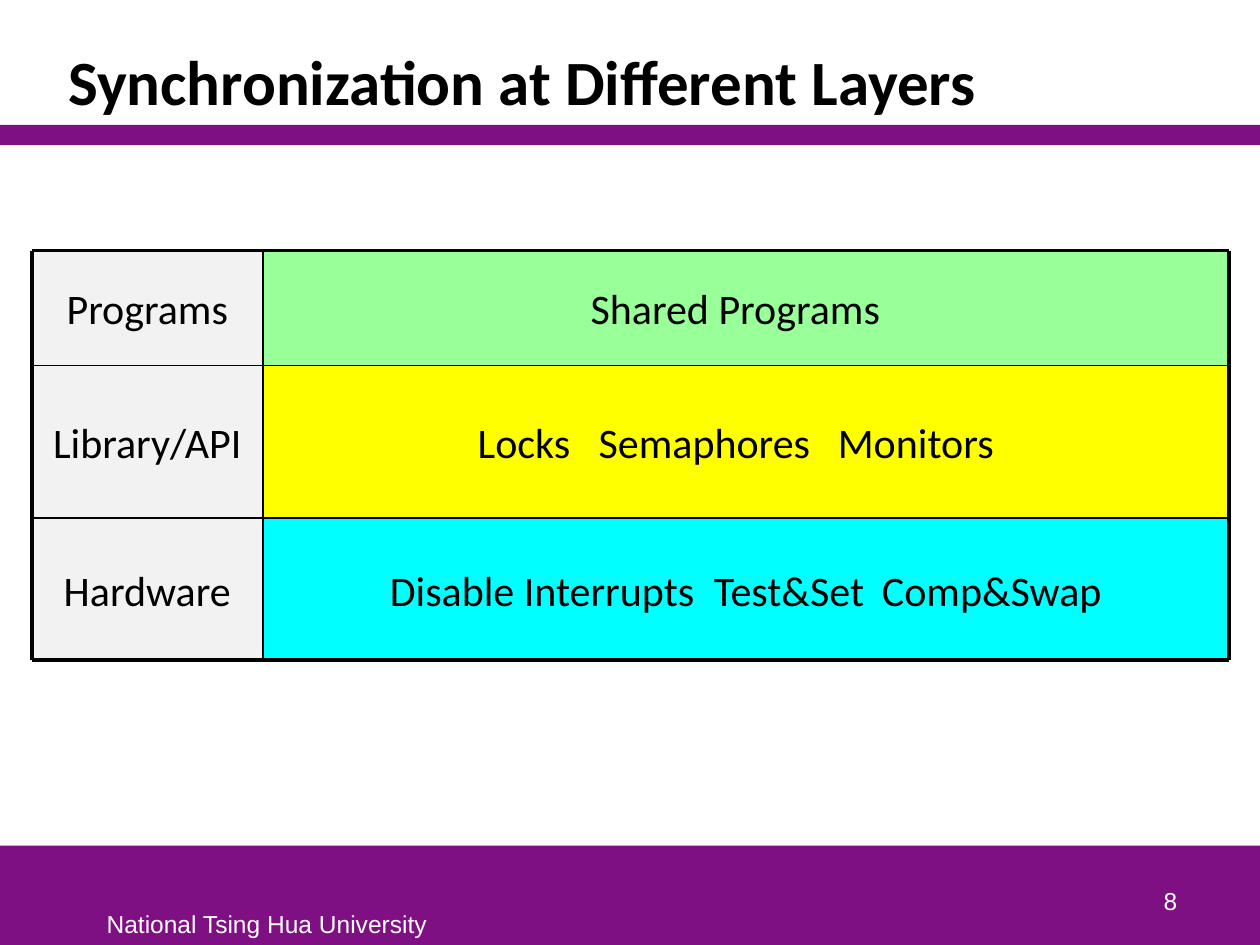
from lxml.etree import SubElement
from pptx import Presentation
from pptx.dml.color import RGBColor
from pptx.enum.shapes import MSO_CONNECTOR as CONNECTOR, MSO_SHAPE as SHAPE
from pptx.enum.text import MSO_ANCHOR as ANCHOR, PP_ALIGN as ALIGN
from pptx.oxml.ns import qn
from pptx.util import Cm, Pt

PURPLE, WHITE, BLACK, GREY = "7F1084", "FFFFFF", "000000", "F2F2F2"


def write(p, text, size, font, color, bold=False):
    """Add one formatted run to a paragraph."""
    r = p.add_run()
    r.text = text
    r.font.size, r.font.name, r.font.bold = Pt(size), font, bold
    r.font.color.rgb = RGBColor.from_string(color)


def add_box(left, top, right, bottom, fill):
    """Add a plain filled rectangle, its edges given in cm."""
    s = sp_tree.add_shape(SHAPE.RECTANGLE, Cm(left), Cm(top),
                          Cm(right - left), Cm(bottom - top))
    s.shadow.inherit = False
    s.fill.solid()
    s.fill.fore_color.rgb = RGBColor.from_string(fill)
    s.line.fill.background()
    return s


prs = Presentation()
prs.slide_width, prs.slide_height = Cm(25.4), Cm(19.05)
slide = prs.slides.add_slide(prs.slide_layouts[5])
sp_tree = slide.shapes

# Footer band and title rule
add_box(0, 17.05, 25.4, 19.05, PURPLE)
add_box(0, 2.52, 25.4, 2.92, PURPLE)

# Title
title = sp_tree.title
title.left, title.top, title.width, title.height = Cm(1.12), Cm(0.64), Cm(22.78), Cm(1.88)
title.text_frame.vertical_anchor = ANCHOR.BOTTOM
p = title.text_frame.paragraphs[0]
p.alignment, p.line_spacing = ALIGN.LEFT, 0.85
write(p, "Synchronization at Different Layers", 36, "Calibri", BLACK, bold=True)

# University name and page number
footers = [
    ("National Tsing Hua University", 1.9, 18.2, 7.02, 0.85, ALIGN.LEFT, False),
    ("8", 18.7, 17.3, 5.28, 1.27, ALIGN.RIGHT, True),
]
for text, left, top, width, height, align, wrap in footers:
    tf = sp_tree.add_textbox(Cm(left), Cm(top), Cm(width), Cm(height)).text_frame
    tf.word_wrap, tf.vertical_anchor = wrap, ANCHOR.BOTTOM
    tf.paragraphs[0].alignment = align
    write(tf.paragraphs[0], text, 14, "Arial", WHITE)

# Layers: label, mechanisms, fill, left inset and tab stops of the mechanisms
layers = [
    ("Programs", ["Shared Programs"], "99FF99", 0.25, []),
    ("Library/API", ["Locks", "Semaphores", "Monitors"], "FFFF00", 4.75, [2.44, 7.26]),
    ("Hardware", ["Disable Interrupts", "Test&Set", "Comp&Swap"], "00FFFF", 2.98, [6.53, 9.92]),
]
row_edges = [5.05, 7.37, 10.45, 13.31]
left_edge, divider, right_edge = 0.64, 5.3, 24.77
mechanism_left = 4.88  # runs under the label column

for (label, mechanisms, fill, inset, tabs), top, bottom in zip(layers, row_edges, row_edges[1:]):
    value_box = add_box(mechanism_left, top, right_edge, bottom, fill)
    label_box = add_box(left_edge, top, divider, bottom, GREY)
    for s, text in ((value_box, "\t".join(mechanisms)), (label_box, label)):
        tf = s.text_frame
        tf.word_wrap, tf.vertical_anchor = True, ANCHOR.MIDDLE
        p = tf.paragraphs[0]
        p.alignment = ALIGN.CENTER
        if s is value_box and tabs:
            tf.margin_left = Cm(inset)
            p.alignment = ALIGN.LEFT
            tab_list = SubElement(p._p.get_or_add_pPr(), qn("a:tabLst"))
            for pos in tabs:
                SubElement(tab_list, qn("a:tab"), pos=str(Cm(pos)), algn="l")
        write(p, text, 24, "Calibri", BLACK)

# Grid lines: thick around the outside, thin inside
top_edge, bottom_edge = row_edges[0], row_edges[-1]
grid = [(left_edge, y, right_edge, y) for y in row_edges]
grid += [(x, top_edge, x, bottom_edge) for x in (left_edge, divider, right_edge)]
for x1, y1, x2, y2 in grid:
    inner = x1 == x2 == divider or y1 == y2 and y1 in row_edges[1:-1]
    c = sp_tree.add_connector(CONNECTOR.STRAIGHT, Cm(x1), Cm(y1), Cm(x2), Cm(y2))
    c.line.color.rgb = RGBColor.from_string(BLACK)
    c.line.width = Pt(1 if inner else 2.25)
    SubElement(c._element.spPr, qn("a:effectLst"))

prs.save("out.pptx")
